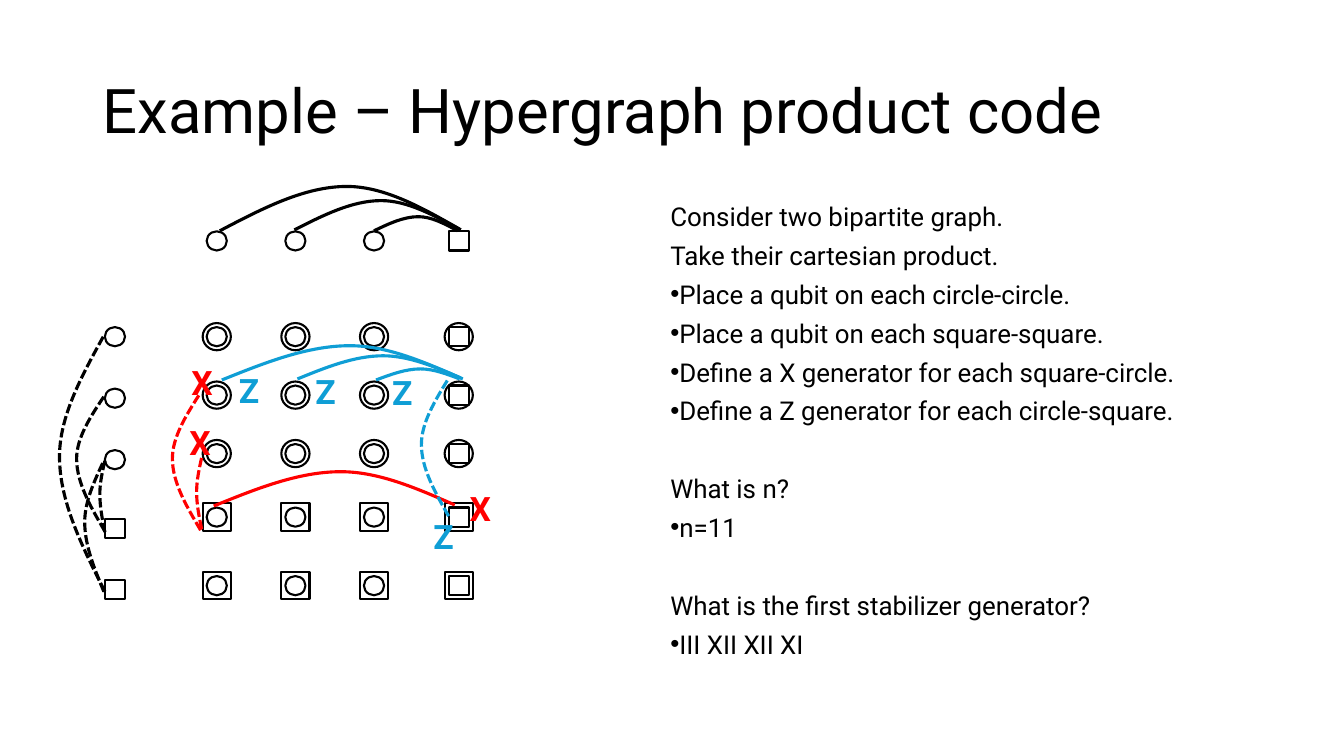
import pptx
import pptx.dml.color
import pptx.enum.dml
import pptx.enum.shapes
import pptx.enum.text
import pptx.oxml
import pptx.oxml.ns
import pptx.util

Inches = pptx.util.Inches
Pt = pptx.util.Pt

BLACK = pptx.dml.color.RGBColor(0x00, 0x00, 0x00)
WHITE = pptx.dml.color.RGBColor(0xFF, 0xFF, 0xFF)
RED = pptx.dml.color.RGBColor(0xFF, 0x00, 0x00)
BLUE = pptx.dml.color.RGBColor(0x0F, 0x9E, 0xD5)

CIRCLE = pptx.enum.shapes.MSO_SHAPE.OVAL
SQUARE = pptx.enum.shapes.MSO_SHAPE.RECTANGLE
INNER_SIZE = (0.2, 0.19)
OUTER_SIZE = (0.28, 0.27)

# Node centres and kinds of the two bipartite graphs
COLUMNS = [(2.15, CIRCLE), (2.93, CIRCLE), (3.71, CIRCLE), (4.55, SQUARE)]
ROWS = [(3.34, CIRCLE), (3.92, CIRCLE), (4.5, CIRCLE), (5.13, SQUARE), (5.81, SQUARE)]
TOP_GRAPH_Y = 2.39
LEFT_GRAPH_X = 1.14
LEFT_GRAPH = [(3.34, CIRCLE), (3.95, CIRCLE), (4.56, CIRCLE), (5.24, SQUARE), (5.85, SQUARE)]

# Solid arcs: start, apex, end, colour
SOLID_ARCS = [
    ((3.71, 2.29), (4.15, 2.15), (4.54, 2.29), BLACK),
    ((2.18, 2.29), (3.44, 1.85), (4.57, 2.28), BLACK),
    ((2.92, 2.28), (3.78, 1.99), (4.55, 2.27), BLACK),
    ((2.12, 5.02), (3.38, 4.68), (4.51, 5.01), RED),
    ((3.73, 3.77), (4.17, 3.66), (4.56, 3.76), BLUE),
    ((2.2, 3.77), (3.47, 3.43), (4.59, 3.76), BLUE),
    ((2.95, 3.76), (3.8, 3.53), (4.57, 3.75), BLUE),
]
DASHED_ARCS = [
    ((1.04, 5.28), (0.99, 4.9), (1.04, 4.57), BLACK),
    ((1.04, 5.27), (0.76, 4.55), (1.04, 3.92), BLACK),
    ((1.03, 5.87), (0.84, 5.18), (1.03, 4.57), BLACK),
    ((1.04, 5.87), (0.59, 4.53), (1.03, 3.33), BLACK),
    ((2, 5.25), (1.95, 4.88), (2, 4.54), RED),
    ((1.99, 5.26), (1.71, 4.55), (1.98, 3.91), RED),
    ((4.45, 5.12), (4.18, 4.41), (4.44, 3.77), BLUE),
]
GENERATOR_LABELS = [
    ("X", 4.56, 4.79, RED), ("X", 1.8, 3.54, RED), ("X", 1.78, 4.14, RED),
    ("Z", 2.27, 3.62, BLUE), ("Z", 3.03, 3.63, BLUE),
    ("Z", 3.79, 3.64, BLUE), ("Z", 4.2, 5.07, BLUE),
]

# Explanation: text, has bullet, space before in points
EXPLANATION = [
    ("Consider two bipartite graph.", False, 10),
    ("Take their cartesian product.", False, 10),
    ("Place a qubit on each circle-circle.", True, 10),
    ("Place a qubit on each square-square.", True, 10),
    ("Define a X generator for each square-circle.", True, 10),
    ("Define a Z generator for each circle-square.", True, 10),
    ("What is n?", False, 37.8),
    ("n=11", True, 10),
    ("What is the first stabilizer generator?", False, 37.8),
    ("III XII XII XI", True, 10),
]


def set_format(target, values):
    for name, value in values.items():
        setattr(target, name, value)


def add_text_box(slide, left, top, width, height, **frame_format):
    box = slide.shapes.add_textbox(Inches(left), Inches(top), Inches(width), Inches(height))
    set_format(box.text_frame, {"word_wrap": True, **frame_format})
    return box.text_frame


def write(paragraph, text, size, color=BLACK, bold=False, **paragraph_format):
    set_format(paragraph, paragraph_format)
    run = paragraph.add_run()
    run.text = text
    set_format(run.font, {"name": "Roboto", "size": Pt(size), "bold": bold})
    run.font.color.rgb = color


def add_bullet(paragraph):
    properties = paragraph._p.get_or_add_pPr()
    set_format(properties, {"marL": Inches(0.25), "indent": Inches(-0.25)})
    for tag, name, value in [("a:buFont", "typeface", "Arial"), ("a:buChar", "char", "•")]:
        element = pptx.oxml.parse_xml(f"<{tag} {pptx.oxml.ns.nsdecls('a')}/>")
        element.set(name, value)
        properties.append(element)


def add_explanation(slide):
    frame = add_text_box(slide, 6.55, 2, 5.86, 4.76)
    for index, (text, has_bullet, space) in enumerate(EXPLANATION):
        paragraph = frame.add_paragraph() if index else frame.paragraphs[0]
        write(paragraph, text, 18.5, line_spacing=0.8, space_before=Pt(space))
        if has_bullet:
            add_bullet(paragraph)


def style_outline(shape, color, width, **line_format):
    shape.shadow.inherit = False
    shape.line.color.rgb = color
    set_format(shape.line, {"width": Pt(width), **line_format})


def add_node(slide, kind, center_x, center_y, size=INNER_SIZE, filled=True):
    width, height = size
    node = slide.shapes.add_shape(
        kind, Inches(center_x - width / 2), Inches(center_y - height / 2),
        Inches(width), Inches(height))
    if filled:
        node.fill.solid()
        node.fill.fore_color.rgb = WHITE
    else:
        node.fill.background()
    style_outline(node, BLACK, 1.5)


def add_product_node(slide, column_kind, row_kind, center_x, center_y):
    """Draw the column's node inside a larger outline of the row's node."""
    add_node(slide, row_kind, center_x, center_y, OUTER_SIZE, filled=False)
    add_node(slide, column_kind, center_x, center_y)


def half_arc_controls(end, apex, axis):
    """Control points from an arc's end to its apex, a third and two thirds along axis."""
    near, far = list(end), list(apex)
    span = apex[axis] - end[axis]
    near[axis] = end[axis] + span / 3
    far[axis] = end[axis] + span * 2 / 3
    near[1 - axis] = (end[1 - axis] + apex[1 - axis]) / 2
    return [near, far]


def add_arc(slide, start, apex, end, color, axis, **line_format):
    """Draw two Bezier halves that meet at apex; axis is 0 for horizontal, 1 for vertical."""
    points = [*half_arc_controls(start, apex, axis), apex,
              *reversed(half_arc_controls(end, apex, axis)), end]
    builder = slide.shapes.build_freeform(Inches(start[0]), Inches(start[1]))
    builder.add_line_segments([(Inches(x), Inches(y)) for x, y in points], close=False)
    arc = builder.convert_to_shape()
    segments = arc._element.findall(".//" + pptx.oxml.ns.qn("a:lnTo"))
    outline = segments[0].getparent()
    for first in range(0, len(segments), 3):
        curve = pptx.oxml.parse_xml(f"<a:cubicBezTo {pptx.oxml.ns.nsdecls('a')}/>")
        for segment in segments[first:first + 3]:
            curve.append(segment[0])
            outline.remove(segment)
        outline.append(curve)
    arc.fill.background()
    style_outline(arc, color, 2.25, **line_format)


def main():
    presentation = pptx.Presentation()
    set_format(presentation, {"slide_width": Inches(13.33), "slide_height": Inches(7.5)})
    slide = presentation.slides.add_slide(presentation.slide_layouts[6])

    title = add_text_box(slide, 0.92, 0.4, 11.5, 1.45,
                         vertical_anchor=pptx.enum.text.MSO_ANCHOR.MIDDLE)
    write(title.paragraphs[0], "Example – Hypergraph product code", 44, line_spacing=0.9)
    add_explanation(slide)

    for x, kind in COLUMNS:
        add_node(slide, kind, x, TOP_GRAPH_Y)
    for y, kind in LEFT_GRAPH:
        add_node(slide, kind, LEFT_GRAPH_X, y)
    for y, row_kind in ROWS:
        for x, column_kind in COLUMNS:
            add_product_node(slide, column_kind, row_kind, x, y)

    for arc in SOLID_ARCS:
        add_arc(slide, *arc, axis=0)
    for arc in DASHED_ARCS:
        add_arc(slide, *arc, axis=1, dash_style=pptx.enum.dml.MSO_LINE.SQUARE_DOT)
    for letter, left, top, color in GENERATOR_LABELS:
        label = add_text_box(slide, left, top, 0.42, 0.5)
        write(label.paragraphs[0], letter, 24, color, bold=True)

    presentation.save("out.pptx")


if __name__ == "__main__":
    main()
